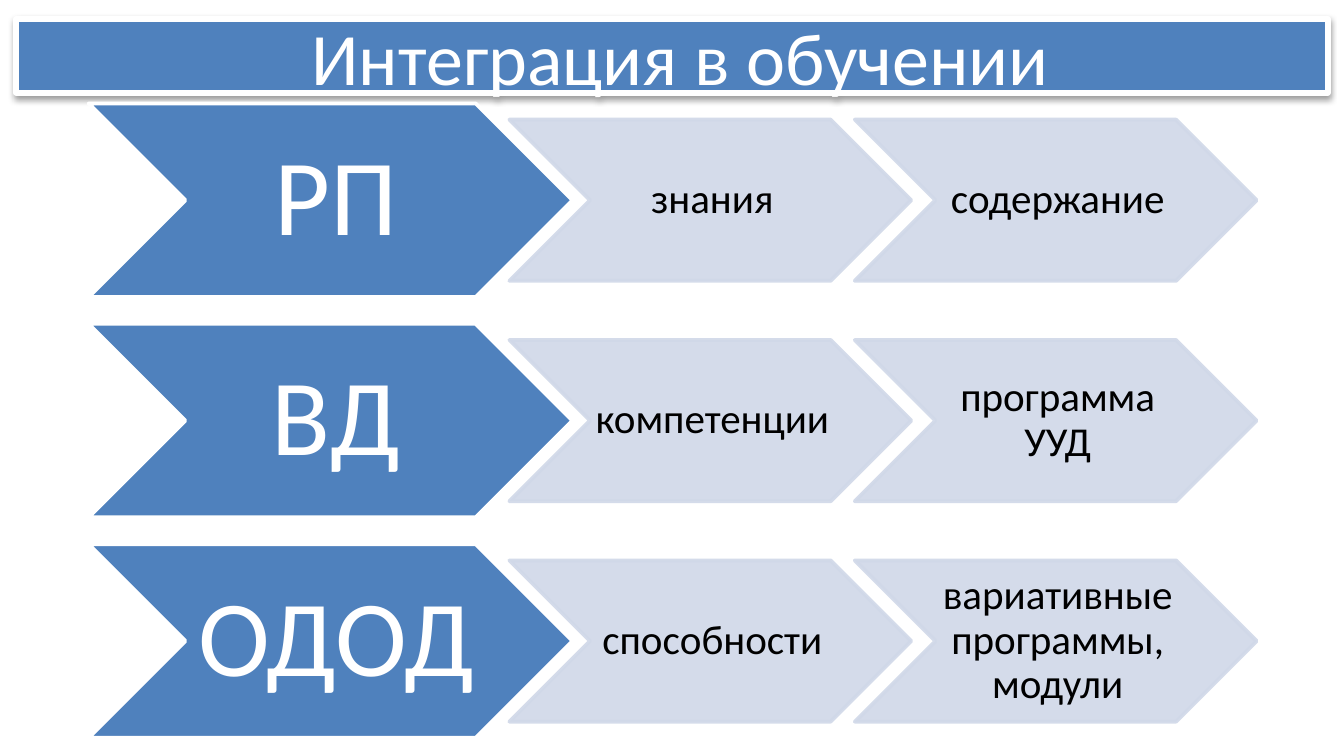
from dataclasses import dataclass

from lxml import etree
from pptx import Presentation
from pptx.dml.color import RGBColor
from pptx.enum.shapes import MSO_SHAPE
from pptx.enum.text import MSO_ANCHOR, MSO_AUTO_SIZE, PP_ALIGN
from pptx.oxml.ns import qn
from pptx.util import Inches, Pt

CHEVRON = MSO_SHAPE.CHEVRON
MIDDLE = MSO_ANCHOR.MIDDLE
NO_FIT = MSO_AUTO_SIZE.NONE
CENTER = PP_ALIGN.CENTER

WIDTH = 10
HEIGHT = WIDTH * 9 / 16
TOP, PITCH = 0.77, 1.64
HEAD_LEFT, HEAD_WIDE, HEAD_HIGH = 0.66, 3.6, 1.44
STEP_LEFT, STEP_WIDE, STEP_HIGH = 3.79, 2.99, 1.2
STEP_PITCH = 2.57

TITLE = " Интеграция в обучении"
ROWS = [
    ("РП", "знания", "содержание"),
    ("ВД", "компетенции", "программа УУД"),
    ("ОДОД", "способности", "вариативные программы, модули"),
]


@dataclass(frozen=True)
class Theme:
    font: str = "Calibri"
    blue: str = "4F81BD"
    pale: str = "D0D8E8"
    white: str = "FFFFFF"
    black: str = "000000"
    title: float = 39.6
    head: float = 58
    step: float = 22


THEME = Theme()


def paint(shape, fill, edge, width):
    shape.shadow.inherit = False
    shape.fill.solid()
    shape.fill.fore_color.rgb = RGBColor.from_string(fill)
    shape.line.color.rgb = RGBColor.from_string(edge)
    shape.line.width = Pt(width)


def set_alpha(color, share):
    etree.SubElement(color, qn("a:alpha"), val=str(share * 1000))


def write(shape, text, size, color, insets):
    frame = shape.text_frame
    frame.text = text
    frame.word_wrap = True
    frame.auto_size = NO_FIT
    frame.vertical_anchor = MIDDLE
    side, edge, right = insets
    frame.margin_left, frame.margin_right = Inches(side), Inches(right)
    frame.margin_top = frame.margin_bottom = Inches(edge)
    line = frame.paragraphs[0]
    line.alignment = CENTER
    font = line.runs[0].font
    font.name, font.size = THEME.font, Pt(size)
    font.color.rgb = RGBColor.from_string(color)


def add_title(slide):
    title = slide.shapes.title
    title.left, title.top = Inches(0.12), Inches(0.14)
    title.width, title.height = Inches(9.76), Inches(0.55)
    paint(title, THEME.blue, THEME.white, 3)
    write(title, TITLE, THEME.title, THEME.white, (0.1, 0.05, 0.1))
    effects = title.element.spPr.find(qn("a:effectLst"))
    shadow = etree.SubElement(
        effects, qn("a:outerShdw"), blurRad=str(Pt(3.1)), dist=str(Pt(1.6)),
        dir="5400000", rotWithShape="0")
    set_alpha(etree.SubElement(shadow, qn("a:srgbClr"), val=THEME.black), 38)


def add_arrow(slide, box, fill, edge, text, size, color, insets):
    arrow = slide.shapes.add_shape(CHEVRON, *map(Inches, box))
    paint(arrow, fill, edge, 2)
    write(arrow, text, size, color, insets)
    arrow.text_frame.paragraphs[0].line_spacing = 0.9
    return arrow


def add_head(slide, row, text):
    box = (HEAD_LEFT, TOP + row * PITCH, HEAD_WIDE, HEAD_HIGH)
    add_arrow(slide, box, THEME.blue, THEME.white, text,
              THEME.head, THEME.white, (0.08, 0.04, 0))


def add_step(slide, row, col, text):
    top = TOP + row * PITCH + (HEAD_HIGH - STEP_HIGH) / 2
    box = (STEP_LEFT + col * STEP_PITCH, top, STEP_WIDE, STEP_HIGH)
    arrow = add_arrow(slide, box, THEME.pale, THEME.pale, text,
                      THEME.step, THEME.black, (0.03, 0.02, 0))
    for color in arrow.element.spPr.iter(qn("a:srgbClr")):
        set_alpha(color, 90)


def main():
    deck = Presentation()
    deck.slide_width, deck.slide_height = Inches(WIDTH), Inches(HEIGHT)
    slide = deck.slides.add_slide(deck.slide_layouts[5])
    add_title(slide)
    for row, (head, *steps) in enumerate(ROWS):
        add_head(slide, row, head)
        for col, step in enumerate(steps):
            add_step(slide, row, col, step)
    deck.save("out.pptx")


if __name__ == "__main__":
    main()
